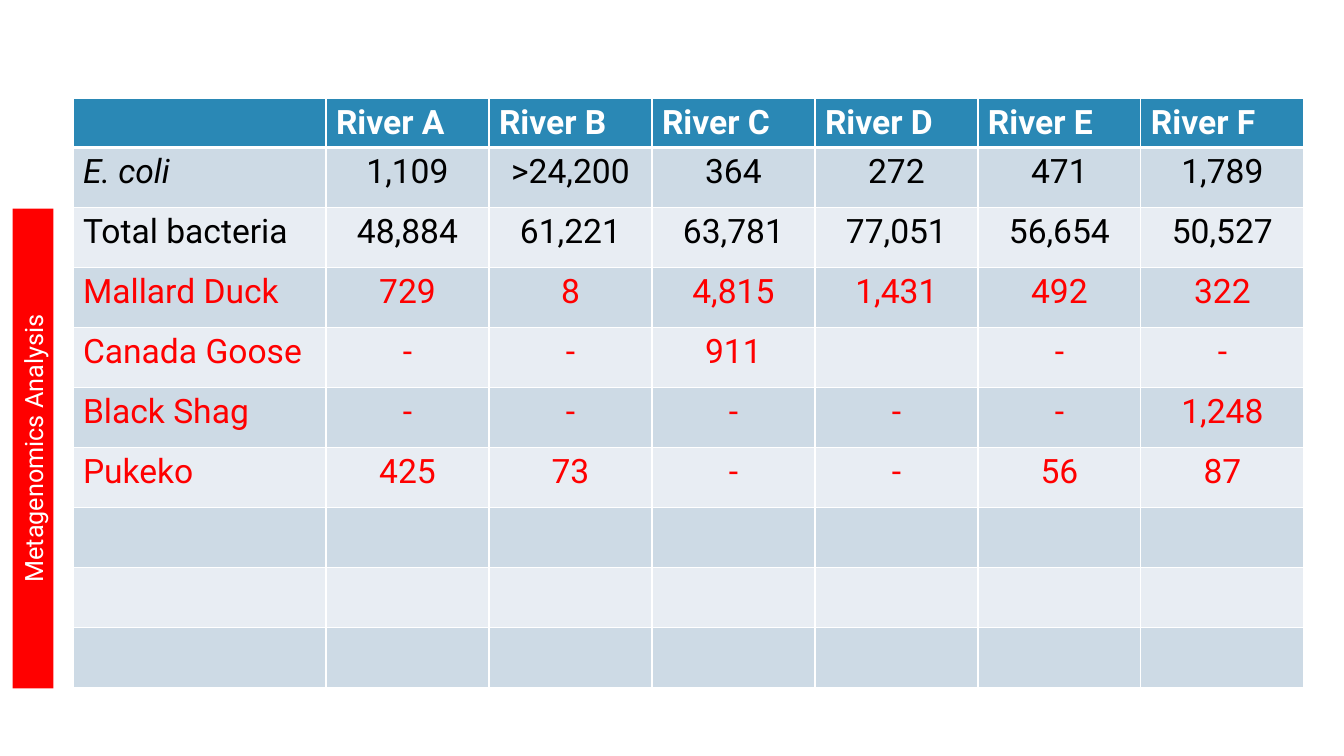
from dataclasses import dataclass

import pptx
import pptx.dml.color
import pptx.enum.shapes
import pptx.enum.text
import pptx.oxml
import pptx.oxml.ns
import pptx.table
import pptx.text.text
import pptx.util

EMU_PER_PX = 914400 / 100.8
FONT = "Roboto"
WHITE, BLACK, RED = "FFFFFF", "000000", "FF0000"
HEADER_FILL = "2A88B5"
BAND_FILLS = ("CDDAE5", "E8EDF3")

TABLE_LEFT, TABLE_TOP = 73, 98
LABEL_WIDTH, RIVER_WIDTH = 253, 163
HEADER_HEIGHT, ROW_HEIGHT = 49, 60

RIVERS = [f"River {letter}" for letter in "ABCDEF"]


@dataclass
class Measurement:
    label: str = ""
    counts: tuple[str, ...] = ("",) * len(RIVERS)
    color: str = BLACK
    italic_label: bool = False


MEASUREMENTS = [
    Measurement("E. coli", ("1,109", ">24,200", "364", "272", "471", "1,789"), italic_label=True),
    Measurement("Total bacteria", ("48,884", "61,221", "63,781", "77,051", "56,654", "50,527")),
    Measurement("Mallard Duck", ("729", "8", "4,815", "1,431", "492", "322"), RED),
    Measurement("Canada Goose", ("-", "-", "911", "", "-", "-"), RED),
    Measurement("Black Shag", ("-", "-", "-", "-", "-", "1,248"), RED),
    Measurement("Pukeko", ("425", "73", "-", "-", "56", "87"), RED),
    Measurement(),
    Measurement(),
    Measurement(),
]


def px(length: float) -> int:
    return pptx.util.Emu(round(length * EMU_PER_PX))


def rgb(color: str) -> pptx.dml.color.RGBColor:
    return pptx.dml.color.RGBColor.from_string(color)


def format_paragraph(
    paragraph: pptx.text.text._Paragraph,
    size: int,
    color: str,
    bold: bool = False,
    italic: bool = False,
    centered: bool = False,
) -> None:
    if centered:
        paragraph.alignment = pptx.enum.text.PP_ALIGN.CENTER
    font = paragraph.font
    font.name, font.size = FONT, pptx.util.Pt(size)
    font.bold, font.italic = bold, italic
    font.color.rgb = rgb(color)


def add_borders(cell: pptx.table._Cell, bottom_points: int, top_points: int) -> None:
    properties = cell._tc.get_or_add_tcPr()
    widths = {"lnL": 1, "lnR": 1, "lnT": top_points, "lnB": bottom_points}
    for index, (tag, points) in enumerate(widths.items()):
        border = pptx.oxml.parse_xml(
            f'<a:{tag} {pptx.oxml.ns.nsdecls("a")} w="{pptx.util.Pt(points)}">'
            f'<a:solidFill><a:srgbClr val="{WHITE}"/></a:solidFill></a:{tag}>'
        )
        properties.insert(index, border)


def fill_cell(
    cell: pptx.table._Cell, text: str, fill: str, bottom_points: int = 1, top_points: int = 1
) -> pptx.text.text._Paragraph:
    """Write and colour a cell, and return its paragraph for formatting."""
    cell.text = text
    cell.fill.solid()
    cell.fill.fore_color.rgb = rgb(fill)
    add_borders(cell, bottom_points, top_points)
    return cell.text_frame.paragraphs[0]


def add_river_table(slide: pptx.slide.Slide) -> None:
    table = slide.shapes.add_table(
        len(MEASUREMENTS) + 1,
        len(RIVERS) + 1,
        px(TABLE_LEFT),
        px(TABLE_TOP),
        px(LABEL_WIDTH + RIVER_WIDTH * len(RIVERS)),
        px(HEADER_HEIGHT + ROW_HEIGHT * len(MEASUREMENTS)),
    ).table
    for index, column in enumerate(table.columns):
        column.width = px(RIVER_WIDTH if index else LABEL_WIDTH)
    for index, row in enumerate(table.rows):
        row.height = px(ROW_HEIGHT if index else HEADER_HEIGHT)

    for column, heading in enumerate(["", *RIVERS]):
        paragraph = fill_cell(table.cell(0, column), heading, HEADER_FILL, bottom_points=3)
        format_paragraph(paragraph, 24, WHITE, bold=True)

    for row, measurement in enumerate(MEASUREMENTS, start=1):
        fill = BAND_FILLS[(row - 1) % 2]
        for column, text in enumerate((measurement.label, *measurement.counts)):
            paragraph = fill_cell(
                table.cell(row, column), text, fill, top_points=3 if row == 1 else 1
            )
            format_paragraph(
                paragraph,
                24,
                measurement.color,
                italic=measurement.italic_label and column == 0,
                centered=column > 0,
            )


def add_analysis_bar(slide: pptx.slide.Slide) -> None:
    bar = slide.shapes.add_shape(
        pptx.enum.shapes.MSO_SHAPE.RECTANGLE, px(-207), px(428), px(480), px(41)
    )
    bar.rotation = 270
    bar.shadow.inherit = False
    bar.fill.solid()
    bar.fill.fore_color.rgb = rgb(RED)
    bar.line.fill.background()
    bar.text_frame.word_wrap = True
    bar.text_frame.text = "Metagenomics Analysis"
    format_paragraph(bar.text_frame.paragraphs[0], 18, WHITE, centered=True)


def main() -> None:
    presentation = pptx.Presentation()
    presentation.slide_width, presentation.slide_height = px(1344), px(756)
    slide = presentation.slides.add_slide(presentation.slide_layouts.get_by_name("Blank"))
    add_river_table(slide)
    add_analysis_bar(slide)
    presentation.save("out.pptx")


if __name__ == "__main__":
    main()
